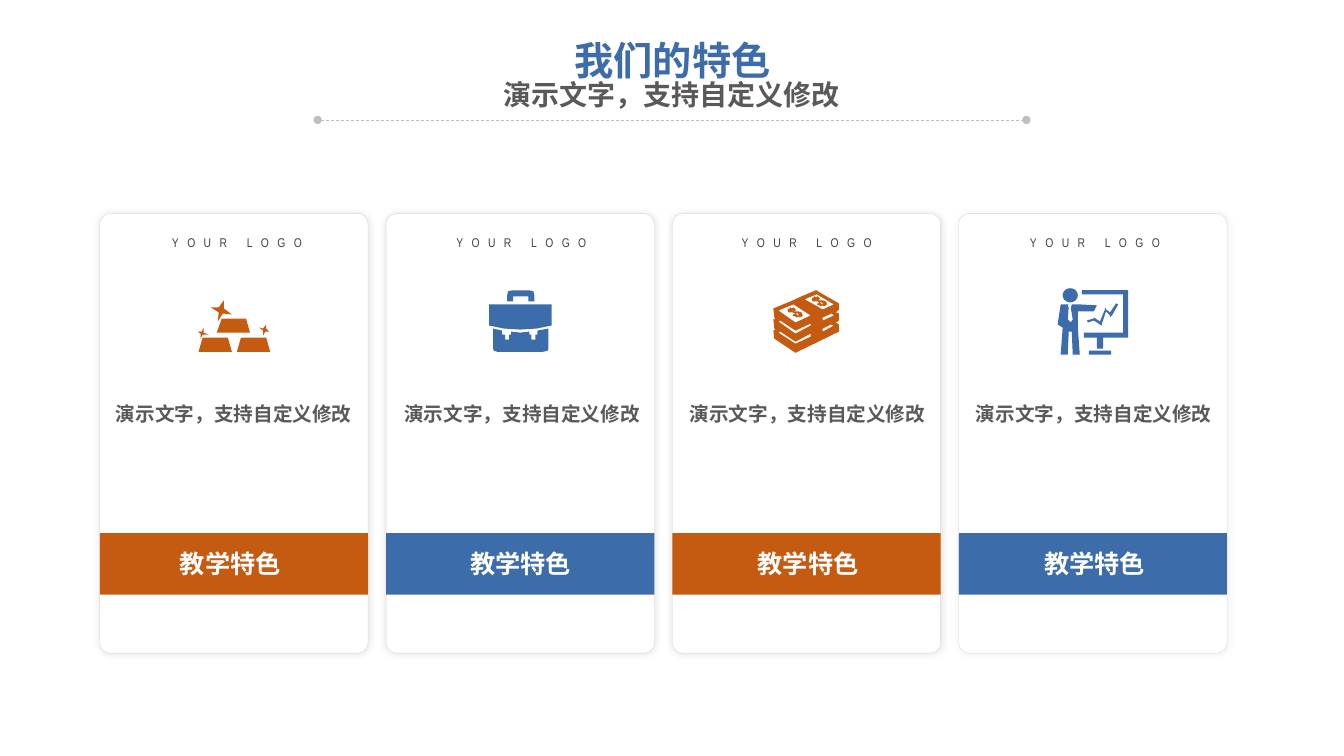
from math import cos, pi, sin

from lxml.etree import SubElement
from pptx import Presentation
from pptx.dml.color import RGBColor
from pptx.enum.dml import MSO_LINE_DASH_STYLE as Dash
from pptx.enum.shapes import MSO_CONNECTOR_TYPE as Connector, MSO_SHAPE as Shape
from pptx.enum.text import MSO_AUTO_SIZE as AutoSize, PP_ALIGN as Align
from pptx.oxml.ns import qn
from pptx.util import Inches, Pt

COLOURS = {"blue": "3D6CAA", "orange": "C55A11", "grey": "595959", "dark": "404040",
           "rule": "BFBFBF", "edge": "D9D9D9", "white": "FFFFFF", "black": "000000"}
LATIN, CJK = "Arial Narrow", "Noto Sans CJK SC"
DEMO_TEXT = "演示文字，支持自定义修改"

# Icon outlines: closed contours of x, y in hundredths of an inch
GOLD_BARS = [
    [(5, 37), (30, 37), (34, 51), (1, 51)],
    [(43, 37), (68, 37), (72, 51), (39, 51)],
    [(24, 18), (19, 32), (52, 32), (48, 18)],
    [(68, 24), (68, 28), (71, 31), (67, 31), (65, 35), (65, 30), (61, 27), (65, 28)],
    [(6, 27), (4, 31), (0, 31), (3, 33), (3, 38), (5, 34), (11, 34), (6, 32)],
    [(26, 0), (26, 8), (34, 14), (25, 13), (20, 21), (21, 12), (13, 7), (21, 7)],
]
BRIEFCASE = [
    [(59, 38), (59, 58), (58, 60), (54, 61), (8, 61), (5, 60), (4, 58), (4, 38), (13, 40),
     (13, 44), (16, 44), (16, 49), (20, 49), (20, 44), (22, 44), (22, 41), (31, 42), (40, 41),
     (40, 44), (42, 44), (42, 49), (46, 49), (46, 44), (48, 44), (48, 40)],
    [(23, 0), (40, 0), (44, 1), (45, 5), (45, 11), (39, 11), (39, 6), (24, 6), (24, 11),
     (18, 11), (18, 5), (19, 1)],
    [(0, 14), (0, 35), (15, 38), (31, 39), (47, 38), (62, 35), (62, 14)],
]
DOLLAR = [(53, 14), (52, 15), (50, 16), (49, 15), (47, 16), (46, 15), (43, 14), (44, 13),
          (46, 12), (48, 14), (49, 14), (49, 13), (48, 12), (46, 12), (43, 11), (39, 11),
          (38, 9), (39, 9), (38, 8), (40, 7), (41, 6), (42, 7), (44, 6), (45, 7), (47, 9),
          (46, 9), (44, 10), (42, 9), (41, 9), (43, 9), (45, 10), (49, 10), (52, 11), (53, 13)]
BANKNOTES = [
    [(28, 6), (42, 0), (44, 0), (44, 1), (65, 13), (65, 19), (62, 22), (65, 23), (65, 30),
     (62, 32), (65, 34), (65, 41), (22, 62), (1, 48), (0, 40), (2, 39), (1, 38), (0, 29),
     (2, 28), (1, 27), (0, 18), (17, 11)],
    [(5, 42), (22, 53), (37, 46), (37, 43), (22, 51), (7, 41)],
    [(37, 33), (37, 35), (22, 43), (5, 31), (7, 30), (22, 40)],
    [(49, 41), (60, 35), (57, 34), (49, 38)],
    [(49, 30), (49, 27), (58, 23), (60, 25)],
    [(49, 19), (60, 14), (43, 4), (31, 9)],
    [(20, 14), (5, 20), (22, 32), (37, 25)],
    DOLLAR,
    [(x - 24, y + 11) for x, y in DOLLAR],
]
TEACHER = [
    [(12.5 + 7.5 * cos(k * pi / 16), 7 + 7 * sin(k * pi / 16)) for k in range(32)],
    [(29, 32), (36, 30), (36, 29), (42, 33), (47, 21), (47, 19), (48, 21), (52, 24), (58, 15),
     (60, 16), (54, 27), (52, 29), (52, 27), (48, 23), (44, 35), (44, 37), (42, 36), (36, 32),
     (30, 34)],
    [(31, 62), (53, 62), (53, 66), (31, 66)],
    [(45, 49), (70, 49), (70, 2), (24, 2), (24, 6), (65, 6), (65, 44), (26, 44), (26, 49),
     (39, 49), (39, 60), (45, 60)],
    [(0, 36), (5, 39), (3, 66), (10, 66), (11, 43), (14, 43), (15, 66), (22, 66), (20, 39),
     (20, 23), (36, 23), (39, 17), (21, 16), (14, 16), (14, 17), (13, 19), (15, 31), (13, 34),
     (10, 31), (11, 19), (10, 17), (11, 16), (3, 16)],
]

# Offsets within a card: icon left and top, lefts of label, body and logo line
CARDS = [
    {"colour": "orange", "icon": GOLD_BARS, "icon_at": (0.97, 0.86),
     "label": 0.69, "body": 0, "logo": 0.31, "shadow": 12},
    {"colour": "blue", "icon": BRIEFCASE, "icon_at": (1.02, 0.76),
     "label": 0.73, "body": 0.02, "logo": 0.29, "shadow": 12},
    {"colour": "orange", "icon": BANKNOTES, "icon_at": (1, 0.76),
     "label": 0.74, "body": 0.01, "logo": 0.28, "shadow": 12},
    {"colour": "blue", "icon": TEACHER, "icon_at": (0.98, 0.74),
     "label": 0.74, "body": 0.01, "logo": 0.3, "shadow": 7},
]


def rgb(name):
    return RGBColor.from_string(COLOURS[name])


def paint(shape, fill, edge=None):
    shape.shadow.inherit = False
    shape.fill.solid()
    shape.fill.fore_color.rgb = rgb(fill)
    if edge:
        shape.line.color.rgb = rgb(edge)
        shape.line.width = Pt(0.25)
    else:
        shape.line.fill.background()


def add_text(page, box, text, colour, wrap=True, face=LATIN, spacing=None, tracking=None, **font):
    frame = page.shapes.add_textbox(*map(Inches, box)).text_frame
    frame.word_wrap = wrap
    frame.auto_size = AutoSize.SHAPE_TO_FIT_TEXT
    para = frame.paragraphs[0]
    para.alignment = Align.CENTER
    if spacing:
        para.line_spacing = spacing
    span = para.add_run()
    span.text = text
    for name, value in {"name": face, **font}.items():
        setattr(span.font, name, value)
    span.font.color.rgb = rgb(colour)
    props = span.font._element
    SubElement(props, qn("a:ea"), typeface=CJK)
    if tracking:
        props.set("spc", str(tracking * 100))


def add_glow(shape, percent):
    effects = shape._element.spPr.find(qn("a:effectLst"))
    shadow = SubElement(effects, qn("a:outerShdw"), blurRad=str(Pt(6)), dist="0",
                        dir=str(315 * 60000), algn="ctr", rotWithShape="0")
    tone = SubElement(shadow, qn("a:srgbClr"), val=COLOURS["black"])
    SubElement(tone, qn("a:alpha"), val=str(percent * 1000))


def add_icon(page, left, top, contours, colour):
    builder = None
    for contour in contours:
        start, *rest = [(Inches(x / 100), Inches(y / 100)) for x, y in contour]
        if builder is None:
            builder = page.shapes.build_freeform(*start)
        else:
            builder.move_to(*start)
        builder.add_line_segments(rest, close=True)
    paint(builder.convert_to_shape(Inches(left), Inches(top)), colour)


def add_heading(page, left, top, width):
    middle = left + width / 2
    add_text(page, (middle - 1.08, top, 2.17, 0.57), "我们的特色", "blue", wrap=False,
             size=Pt(28), bold=True)
    # Dashed rule with round ends
    y = Inches(top + 0.88)
    rule = page.shapes.add_connector(Connector.STRAIGHT, Inches(left), y, Inches(left + width), y)
    rule.line.color.rgb = rgb("rule")
    rule.line.width = Pt(0.5)
    rule.line.dash_style = Dash.DASH
    for end in ("a:headEnd", "a:tailEnd"):
        SubElement(rule.line._get_or_add_ln(), qn(end), type="oval")
    SubElement(rule._element.spPr, qn("a:effectLst"))
    add_text(page, (middle - 1.78, top + 0.41, 3.55, 0.44), DEMO_TEXT, "grey", wrap=False,
             face=CJK, size=Pt(20), bold=True)


def add_card(page, left, top, width, height, card):
    # Panel and colour band
    panel = page.shapes.add_shape(Shape.ROUNDED_RECTANGLE,
                                  *map(Inches, (left, top, width, height)))
    panel.adjustments[0] = 0.04
    paint(panel, "white", "edge")
    add_glow(panel, card["shadow"])
    band = page.shapes.add_shape(Shape.RECTANGLE,
                                 *map(Inches, (left, top + 3.17, width, 0.61)))
    paint(band, card["colour"])
    # Texts
    add_text(page, (left + card["label"], top + 3.27, 1.21, 0.4), "教学特色", "white",
             wrap=False, size=Pt(18), bold=True)
    add_text(page, (left + card["body"], top + 1.82, width, 0.34), DEMO_TEXT, "grey",
             size=Pt(14), bold=True)
    add_text(page, (left + card["logo"], top + 0.2, 2.1, 0.21), "YOUR LOGO", "dark",
             spacing=0.7, tracking=6, size=Pt(9))
    # Icon
    icon_x, icon_y = card["icon_at"]
    add_icon(page, left + icon_x, top + icon_y, card["icon"], card["colour"])


def main():
    deck = Presentation()
    deck.slide_width, deck.slide_height = Inches(13.33), Inches(7.5)
    page = deck.slides.add_slide(deck.slide_layouts[6])
    add_heading(page, 3.15, 0.31, 7.03)
    for index, card in enumerate(CARDS):
        add_card(page, 0.99 + 2.84 * index, 2.12, 2.66, 4.36, card)
    deck.save("out.pptx")


if __name__ == "__main__":
    main()
